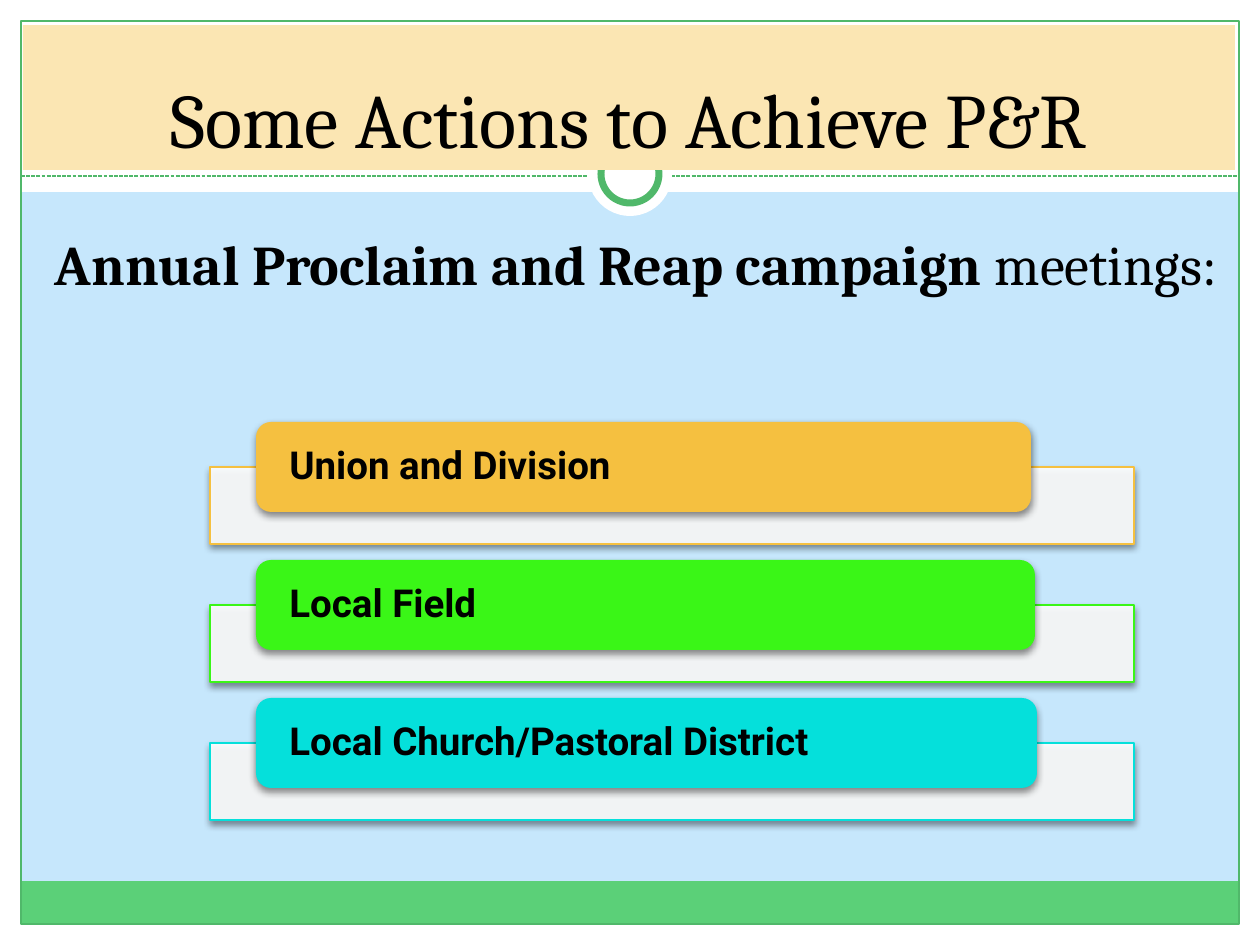
from lxml import etree
from pptx import Presentation
from pptx.dml.color import RGBColor
from pptx.enum.dml import MSO_LINE
from pptx.enum.shapes import MSO_CONNECTOR, MSO_SHAPE
from pptx.enum.text import MSO_ANCHOR, PP_ALIGN
from pptx.oxml import parse_xml
from pptx.oxml.ns import nsdecls, qn
from pptx.util import Pt

RECT, ROUNDED, OVAL = MSO_SHAPE.RECTANGLE, MSO_SHAPE.ROUNDED_RECTANGLE, MSO_SHAPE.OVAL
STRAIGHT, DASH = MSO_CONNECTOR.STRAIGHT, MSO_LINE.SQUARE_DOT
LEFT, CENTER = PP_ALIGN.LEFT, PP_ALIGN.CENTER
TOP, MIDDLE, BOTTOM = MSO_ANCHOR.TOP, MSO_ANCHOR.MIDDLE, MSO_ANCHOR.BOTTOM

BLACK = RGBColor(0x00, 0x00, 0x00)
WHITE = RGBColor(0xFF, 0xFF, 0xFF)
SKY = RGBColor(0xC6, 0xE7, 0xFC)
GREEN = RGBColor(0x5B, 0xD0, 0x78)
DARK_GREEN = RGBColor(0x50, 0xB8, 0x6A)
CREAM = RGBColor(0xFB, 0xE6, 0xB3)
AMBER = RGBColor(0xF5, 0xC0, 0x40)
LIME = RGBColor(0x3A, 0xF6, 0x17)
CYAN = RGBColor(0x05, 0xE0, 0xDB)

PX = 914400 / 126  # EMU in one px
WIDTH, HEIGHT, MARGIN = 1260, 945, 21

SHADOW = (f'<a:effectLst {nsdecls("a")}><a:outerShdw blurRad="50800" dist="25400" '
          'dir="5400000" rotWithShape="0"><a:srgbClr val="000000">'
          '<a:alpha val="45000"/></a:srgbClr></a:outerShdw></a:effectLst>')


def add_box(kind, box, fill=None, line=None, weight=0.75, shadow=False):
    shape = slide.shapes.add_shape(kind, *(round(n * PX) for n in box))
    shape.shadow.inherit = False
    if fill is None:
        shape.fill.background()
    else:
        shape.fill.solid()
        shape.fill.fore_color.rgb = fill
    if line is None:
        shape.line.fill.background()
    else:
        shape.line.color.rgb = line
        shape.line.width = Pt(weight)
    if shadow:
        properties = shape._element.spPr
        properties.replace(properties.find(qn("a:effectLst")), parse_xml(SHADOW))
    return shape


def write(shape, *runs, font="Cambria", size=32, align=CENTER, anchor=TOP,
          inset=None, before=0, spacing=1.0):
    """Each run is a (text, bold) pair."""
    frame = shape.text_frame
    frame.word_wrap = True
    frame.vertical_anchor = anchor
    if inset is not None:
        frame.margin_left = frame.margin_right = round(inset * PX)
        frame.margin_top = frame.margin_bottom = 0
    paragraph = frame.paragraphs[0]
    paragraph.alignment = align
    paragraph.space_before = Pt(before)
    paragraph.line_spacing = spacing
    for text, bold in runs:
        run = paragraph.add_run()
        run.text = text
        run.font.name = font
        run.font.size = Pt(size)
        run.font.bold = bold
        run.font.color.rgb = BLACK


deck = Presentation()
deck.slide_width, deck.slide_height = round(WIDTH * PX), round(HEIGHT * PX)
slide = deck.slides.add_slide(deck.slide_layouts[6])
slide.background.fill.solid()
slide.background.fill.fore_color.rgb = SKY

# White margins, green footer and frame
for edge in [(0, HEIGHT - MARGIN, WIDTH, MARGIN), (0, 0, WIDTH, 192),
             (0, 0, MARGIN, HEIGHT), (WIDTH - MARGIN, 0, MARGIN, HEIGHT)]:
    add_box(RECT, edge, WHITE)
add_box(RECT, (MARGIN, 881, 1217, 43), GREEN)
add_box(RECT, (MARGIN, MARGIN, WIDTH - 2 * MARGIN, HEIGHT - 2 * MARGIN), line=DARK_GREEN)

# Dashed divider with its ring
divider = slide.shapes.add_connector(
    STRAIGHT, *(round(n * PX) for n in (MARGIN, 176, WIDTH - MARGIN, 176)))
divider.line.color.rgb = DARK_GREEN
divider.line.width = Pt(0.75)
divider.line.dash_style = DASH
etree.SubElement(divider._element.spPr, qn("a:effectLst"))
add_box(OVAL, (588, 132, 84, 84), WHITE)
add_box(OVAL, (601, 145, 58, 58), WHITE, DARK_GREEN, 4)

# Title and heading
title = add_box(RECT, (23, 25, 1212, 145), CREAM)
write(title, ("Some Actions to Achieve P&R", False), size=44, anchor=BOTTOM)
heading = slide.shapes.add_textbox(*(round(n * PX) for n in (0, 223, WIDTH, 140)))
write(heading, (" Annual Proclaim and Reap campaign", True), (" meetings:", False), before=6)
indent = heading.text_frame.paragraphs[0]._p.get_or_add_pPr()
indent.set("marL", "365760")
indent.set("indent", "-365760")

# Levels: a pale bar behind a coloured label
levels = [("Union and Division", AMBER, 775),
          ("Local Field", LIME, 779),
          ("Local Church/Pastoral District", CYAN, 781)]
for row, (level, color, label_width) in enumerate(levels):
    y = 422 + 138 * row
    bar = add_box(RECT, (210, y + 45, 924, 77), WHITE, color, shadow=True)
    bar_color = bar._element.spPr.find(qn("a:solidFill"))[0]
    etree.SubElement(bar_color, qn("a:alpha"), val="90000")
    label = add_box(ROUNDED, (256, y, label_width, 90), color, shadow=True)
    write(label, (level, True), font="Roboto", size=22, align=LEFT,
          anchor=MIDDLE, inset=29, spacing=0.9)

deck.save("out.pptx")
